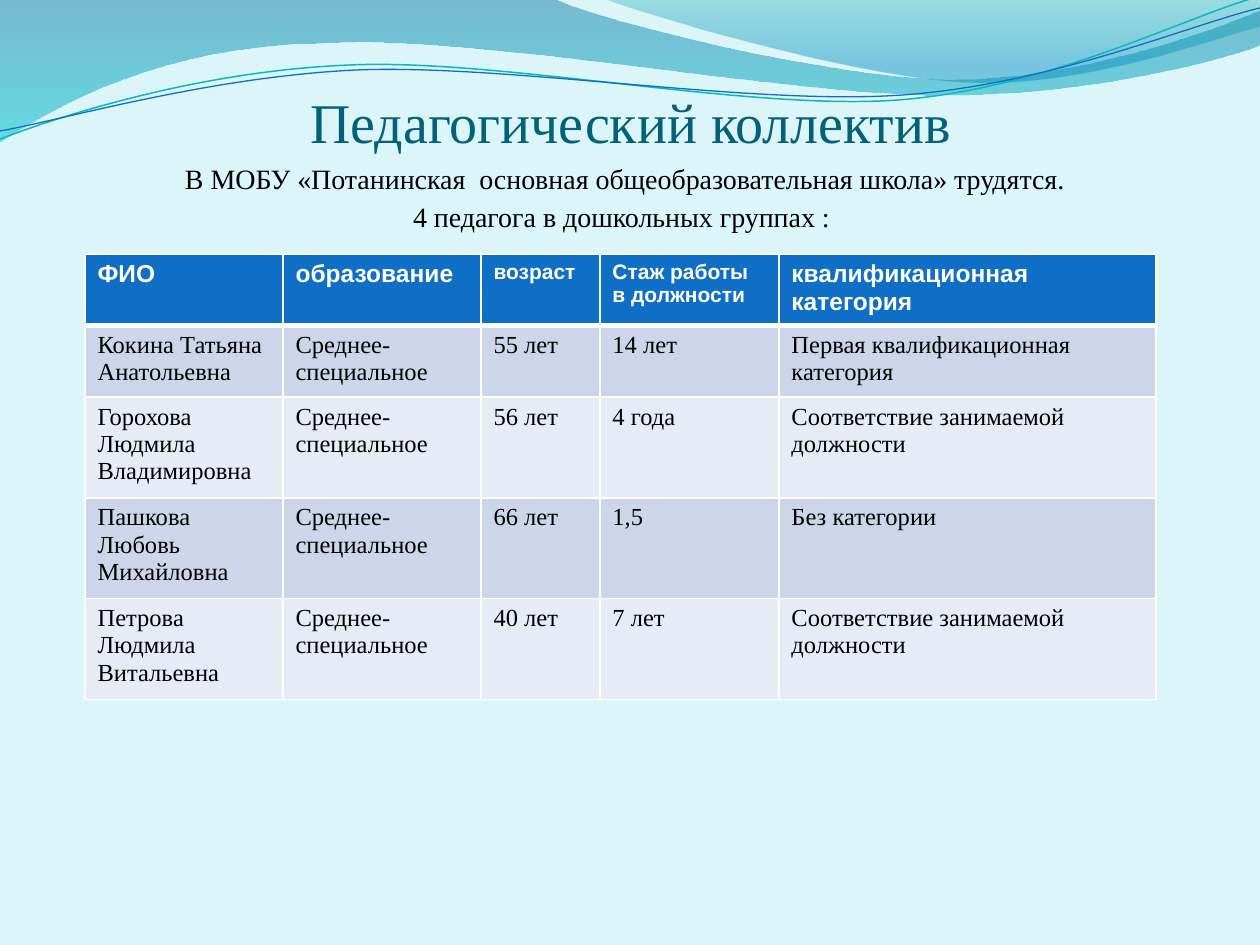
"""Build the teaching staff slide: waves, title, introduction and staff table."""
from dataclasses import dataclass

from lxml import etree
from pptx import Presentation
from pptx import util as u
from pptx.dml.color import RGBColor
from pptx.enum import text
from pptx.oxml import parse_xml
from pptx.oxml.ns import qn

NS = "http://schemas.openxmlformats.org/drawingml/2006/main"
EMU_PER_PX = 914400 / 126
Point = tuple[int, int]
Segment = tuple[Point, ...]


@dataclass(frozen=True)
class Theme:
    background: str = "DBF5F9"
    title: str = "04617B"
    ink: str = "000000"
    white: str = "FFFFFF"
    header: str = "0F6FC6"
    teal: str = "0AB8BF"
    bands: tuple[str, str] = ("CCD5EA", "E7EBF5")
    serif: str = "Times New Roman"
    sans: str = "Arial"
    title_size: int = 32
    intro_size: int = 16
    cell_size: int = 14
    small_size: int = 12


@dataclass(frozen=True)
class Stop:
    position: int
    color: str
    opacity: int


@dataclass(frozen=True)
class Curve:
    start: Point
    segments: tuple[Segment, ...]


@dataclass(frozen=True)
class Wave:
    curve: Curve
    stops: tuple[Stop, Stop]


@dataclass(frozen=True)
class Strand:
    curve: Curve
    color: str
    width: float


THEME = Theme()
WAVES = (
    Wave(
        Curve((0, 0), (
            ((554, -1),),
            ((600, 21), (837, 79), (955, 79)),
            ((1075, 79), (1207, 33), (1260, 11)),
            ((1261, 45),),
            ((1239, 55), (1096, 96), (940, 95)),
            ((783, 95), (481, 35), (324, 43)),
            ((163, 45), (58, 105), (-1, 142)),
            ((0, 0),),
        )),
        (Stop(0, "0074A1", 45), Stop(100, "00C6CF", 55)),
    ),
    Wave(
        Curve((604, -1), (
            ((641, 14), (859, 78), (969, 82)),
            ((1079, 87), (1211, 40), (1260, 26)),
            ((1260, 0),),
            ((604, -1),),
        )),
        (Stop(0, "00A1A9", 30), Stop(80, "008BBF", 45)),
    ),
)
STRANDS = (
    Strand(
        Curve((0, 139), (
            ((60, 116), (199, 71), (349, 65)),
            ((498, 58), (747, 111), (898, 100)),
            ((1050, 88), (1182, 18), (1257, -3)),
        )),
        THEME.teal, 0.85,
    ),
    Strand(
        Curve((0, 131), (
            ((59, 121), (207, 77), (357, 70)),
            ((508, 64), (752, 106), (903, 95)),
            ((1053, 84), (1186, 26), (1260, 8)),
        )),
        THEME.header, 0.75,
    ),
)
INTRO = (
    "В МОБУ «Потанинская  основная общеобразовательная школа» трудятся.",
    "4 педагога в дошкольных группах : ",
)
COLUMNS = (198, 198, 119, 179, 377)
ROWS = (67, 67, 94, 94, 94)
SMALL_HEADINGS = (2, 3)
EDUCATION = "Среднее-специальное"
SUITABLE = "Соответствие занимаемой должности"
STAFF = (
    ("ФИО", "образование", "возраст", "Стаж работы в должности", "квалификационная категория"),
    ("Кокина Татьяна Анатольевна", EDUCATION, "55 лет", "14 лет", "Первая квалификационная категория"),
    ("Горохова Людмила Владимировна", EDUCATION, "56 лет", "4 года", SUITABLE),
    ("Пашкова Любовь Михайловна", EDUCATION, "66 лет", "1,5", "Без категории"),
    ("Петрова Людмила Витальевна", EDUCATION, "40 лет", "7 лет", SUITABLE),
)


def px(value: float) -> u.Emu:
    return u.Emu(round(value * EMU_PER_PX))


def rgb(color: str) -> RGBColor:
    return RGBColor.from_string(color)


def style_text(p, size: int, color: str, font: str, bold: bool = False) -> None:
    for r in p.runs:
        r.font.size, r.font.name, r.font.bold = u.Pt(size), font, bold
        r.font.color.rgb = rgb(color)
    end = p._p.get_or_add_endParaRPr()
    end.set("sz", str(size * 100))
    etree.SubElement(end, qn("a:latin"), typeface=font)


def draw_curve(s, curve: Curve, close: bool):
    builder = s.shapes.build_freeform(px(curve.start[0]), px(curve.start[1]))
    ends = [segment[-1] for segment in curve.segments]
    builder.add_line_segments([(px(x), px(y)) for x, y in ends], close=close)
    sp = builder.convert_to_shape()
    sp.shadow.inherit = False
    for line, segment in zip(list(sp.element.iter(qn("a:lnTo"))), curve.segments):
        if len(segment) == 3:
            line.tag = qn("a:cubicBezTo")
            controls = [
                etree.Element(qn("a:pt"), x=str(px(x) - sp.left), y=str(px(y) - sp.top))
                for x, y in segment[:-1]
            ]
            line[:0] = controls
    return sp


def draw_wave(s, wave: Wave) -> None:
    sp = draw_curve(s, wave.curve, True)
    sp.line.fill.background()
    stops = "".join(
        f'<a:gs pos="{stop.position * 1000}"><a:srgbClr val="{stop.color}">'
        f'<a:alpha val="{stop.opacity * 1000}"/></a:srgbClr></a:gs>'
        for stop in wave.stops
    )
    gradient = parse_xml(
        f'<a:gradFill xmlns:a="{NS}"><a:gsLst>{stops}</a:gsLst><a:lin ang="5400000" scaled="0"/></a:gradFill>'
    )
    sp.element.spPr.find(qn("a:custGeom")).addnext(gradient)


def draw_strand(s, strand: Strand) -> None:
    sp = draw_curve(s, strand.curve, False)
    sp.fill.background()
    sp.line.color.rgb = rgb(strand.color)
    sp.line.width = u.Pt(strand.width)


def write_title(s) -> None:
    sp = s.shapes.title
    s.shapes.element.append(sp.element)
    sp.left, sp.top, sp.width, sp.height = px(64), px(45), px(1134), px(110)
    tf = sp.text_frame
    tf.text = "Педагогический коллектив"
    tf.vertical_anchor = text.MSO_ANCHOR.BOTTOM
    tf.margin_left = tf.margin_right = tf.margin_bottom = 0
    p = tf.paragraphs[0]
    p.alignment = text.PP_ALIGN.CENTER
    style_text(p, THEME.title_size, THEME.title, THEME.serif)


def write_intro(s) -> None:
    tf = s.shapes.add_textbox(px(35), px(155), px(1180), px(228)).text_frame
    tf.word_wrap = True
    tf.text = "\n".join(INTRO)
    for i, p in enumerate(tf.paragraphs):
        p.alignment = text.PP_ALIGN.CENTER
        p.space_before = u.Pt(3 if i else 0)
        style_text(p, THEME.intro_size, THEME.ink, THEME.serif)


def set_borders(cell, widths: dict[str, int]) -> None:
    tc_pr = cell._tc.get_or_add_tcPr()
    for i, (side, width) in enumerate(widths.items()):
        ln = etree.Element(qn(f"a:ln{side}"), w=str(u.Pt(width)))
        fill = etree.SubElement(ln, qn("a:solidFill"))
        etree.SubElement(fill, qn("a:srgbClr"), val=THEME.white)
        tc_pr.insert(i, ln)


def draw_table(s) -> None:
    table = s.shapes.add_table(len(ROWS), len(COLUMNS), px(85), px(254), px(sum(COLUMNS)), px(sum(ROWS))).table
    for column, width in zip(table.columns, COLUMNS):
        column.width = px(width)
    for i, (row, height, values) in enumerate(zip(table.rows, ROWS, STAFF)):
        row.height = px(height)
        for j, (cell, value) in enumerate(zip(row.cells, values)):
            cell.text = value
            cell.fill.solid()
            cell.fill.fore_color.rgb = rgb(THEME.bands[(i - 1) % 2] if i else THEME.header)
            set_borders(cell, {"L": 1, "R": 1, "T": 3 if i == 1 else 1, "B": 1 if i else 3})
            size = THEME.small_size if i == 0 and j in SMALL_HEADINGS else THEME.cell_size
            color, font = (THEME.ink, THEME.serif) if i else (THEME.white, THEME.sans)
            style_text(cell.text_frame.paragraphs[0], size, color, font, i == 0)


def main() -> None:
    prs = Presentation()
    prs.slide_width, prs.slide_height = px(1260), px(945)
    s = prs.slides.add_slide(prs.slide_layouts[5])
    s.background.fill.solid()
    s.background.fill.fore_color.rgb = rgb(THEME.background)
    for wave in WAVES:
        draw_wave(s, wave)
    for strand in STRANDS:
        draw_strand(s, strand)
    write_title(s)
    write_intro(s)
    draw_table(s)
    prs.save("out.pptx")


if __name__ == "__main__":
    main()
